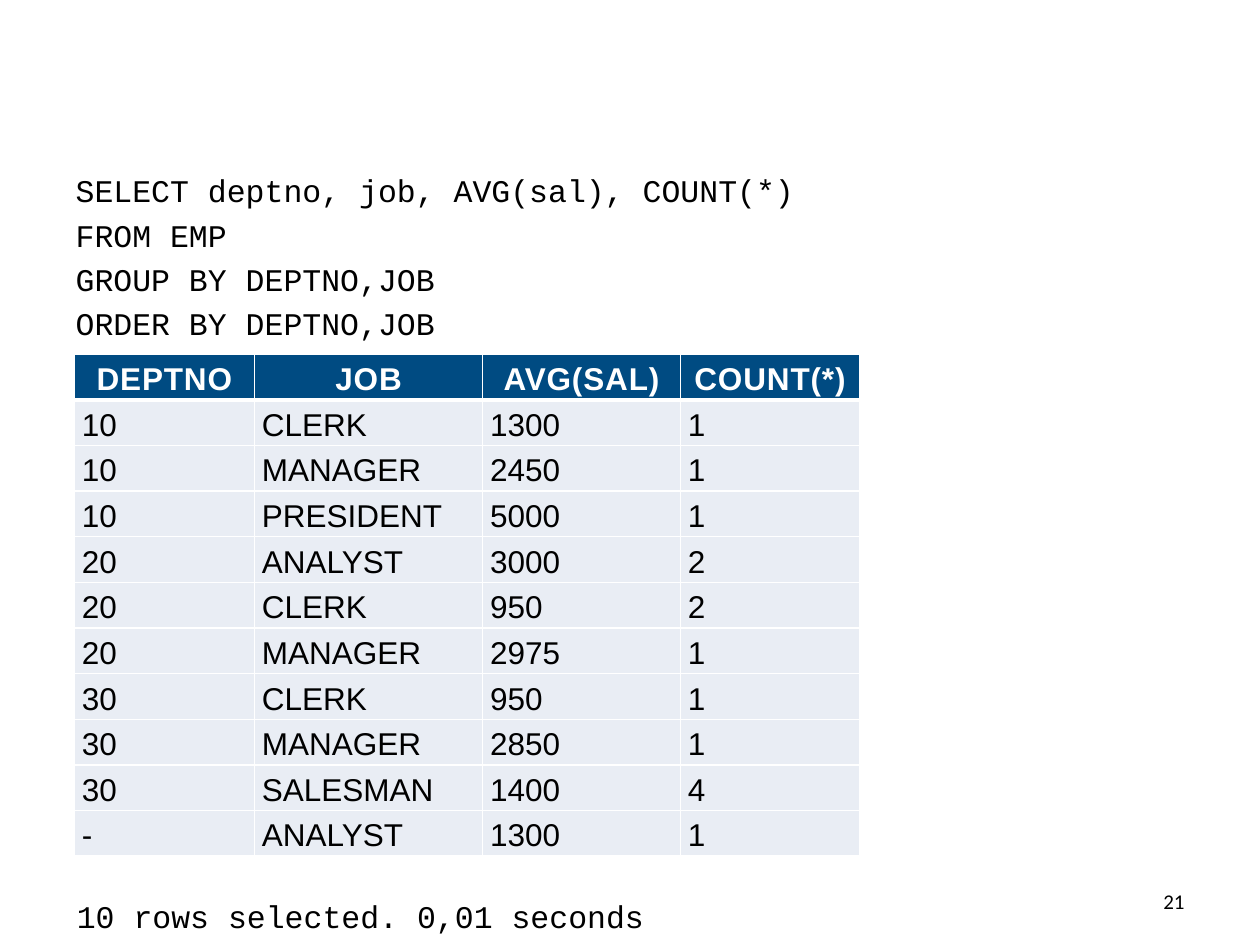
from lxml.etree import SubElement
from pptx import Presentation
from pptx.dml.color import RGBColor
from pptx.enum.text import MSO_ANCHOR, PP_ALIGN
from pptx.oxml.ns import qn
from pptx.util import Cm, Pt

QUERY = [
    "SELECT deptno, job, AVG(sal), COUNT(*)",
    "FROM EMP",
    "GROUP BY DEPTNO,JOB",
    "ORDER BY DEPTNO,JOB",
]
HEADER = ("DEPTNO", "JOB", "AVG(SAL)", "COUNT(*)")
RESULT = [
    ("10", "CLERK", "1300", "1"),
    ("10", "MANAGER", "2450", "1"),
    ("10", "PRESIDENT", "5000", "1"),
    ("20", "ANALYST", "3000", "2"),
    ("20", "CLERK", "950", "2"),
    ("20", "MANAGER", "2975", "1"),
    ("30", "CLERK", "950", "1"),
    ("30", "MANAGER", "2850", "1"),
    ("30", "SALESMAN", "1400", "4"),
    ("-", "ANALYST", "1300", "1"),
]
STATUS = "10 rows selected. 0,01 seconds"
PAGE_NUMBER = "21"

COLUMN_WIDTHS = (3.63, 4.6, 3.99, 3.61)
ROW_HEIGHT = 0.92
BLACK, WHITE, NAVY, PALE = "000000", "FFFFFF", "004B82", "E9EDF4"


def color(value):
    return RGBColor.from_string(value)


def write(para, text, font="Courier New", size=18, fill=BLACK, bold=False,
          align=None, line_spacing=None, tracking=None):
    """Add one formatted run; tracking is letter spacing in points."""
    para.alignment = align
    para.line_spacing = line_spacing
    span = para.add_run()
    span.text = text
    span.font.name = font
    span.font.size = Pt(size)
    span.font.bold = bold
    span.font.color.rgb = color(fill)
    if tracking:
        span.font._element.set("spc", str(int(tracking * 100)))


def remove_bullet(para):
    properties = para._p.get_or_add_pPr()
    properties.set("marL", "0")
    properties.set("indent", "0")
    SubElement(properties, qn("a:buNone"))


def add_borders(cell, bottom):
    """Draw white borders, 1 pt except for the bottom; call before filling."""
    properties = cell._tc.get_or_add_tcPr()
    for side, width in (("L", 1), ("R", 1), ("T", 1), ("B", bottom)):
        line = SubElement(properties, qn(f"a:ln{side}"), w=str(Pt(width)))
        fill = SubElement(line, qn("a:solidFill"))
        SubElement(fill, qn("a:srgbClr"), val=WHITE)


def add_query(page):
    body = page.placeholders[1]
    body.left, body.top, body.width, body.height = Cm(1.27), Cm(3.33), Cm(22.86), Cm(3.4)
    frame = body.text_frame
    for index, text in enumerate(QUERY):
        para = frame.add_paragraph() if index else frame.paragraphs[0]
        write(para, text)
        remove_bullet(para)


def add_result(page):
    rows = [HEADER, *RESULT]
    table = page.shapes.add_table(
        len(rows), len(HEADER), Cm(1.5), Cm(7.14),
        Cm(sum(COLUMN_WIDTHS)), Cm(ROW_HEIGHT * len(rows))).table
    for column, width in zip(table.columns, COLUMN_WIDTHS):
        column.width = Cm(width)
    for row_index, values in enumerate(rows):
        is_header = row_index == 0
        for column_index, text in enumerate(values):
            cell = table.cell(row_index, column_index)
            cell.margin_left = cell.margin_right = Cm(0.15)
            cell.margin_top = cell.margin_bottom = Cm(0.05)
            cell.vertical_anchor = MSO_ANCHOR.BOTTOM if is_header else MSO_ANCHOR.MIDDLE
            add_borders(cell, bottom=3 if is_header else 1)
            cell.fill.solid()
            cell.fill.fore_color.rgb = color(NAVY if is_header else PALE)
            write(cell.text_frame.paragraphs[0], text, font="Arial",
                  fill=WHITE if is_header else BLACK, bold=is_header,
                  align=PP_ALIGN.CENTER if is_header else PP_ALIGN.LEFT,
                  line_spacing=1.15, tracking=0.5 if is_header else None)


def add_label(page, text, left, top, width, anchor=MSO_ANCHOR.TOP, **style):
    frame = page.shapes.add_textbox(Cm(left), Cm(top), Cm(width), Cm(1.02)).text_frame
    frame.word_wrap = True
    frame.vertical_anchor = anchor
    write(frame.paragraphs[0], text, **style)


def main():
    deck = Presentation()
    deck.slide_width, deck.slide_height = Cm(25.4), Cm(19.05)
    page = deck.slides.add_slide(deck.slide_layouts.get_by_name("Title and Content"))
    title = page.shapes.title._element
    title.getparent().remove(title)

    add_query(page)
    add_result(page)
    add_label(page, STATUS, 1.3, 17.96, 12.7)
    add_label(page, PAGE_NUMBER, 18.2, 17.65, 5.93, anchor=MSO_ANCHOR.MIDDLE,
              font="Calibri", size=12, align=PP_ALIGN.RIGHT)
    deck.save("out.pptx")


if __name__ == "__main__":
    main()
